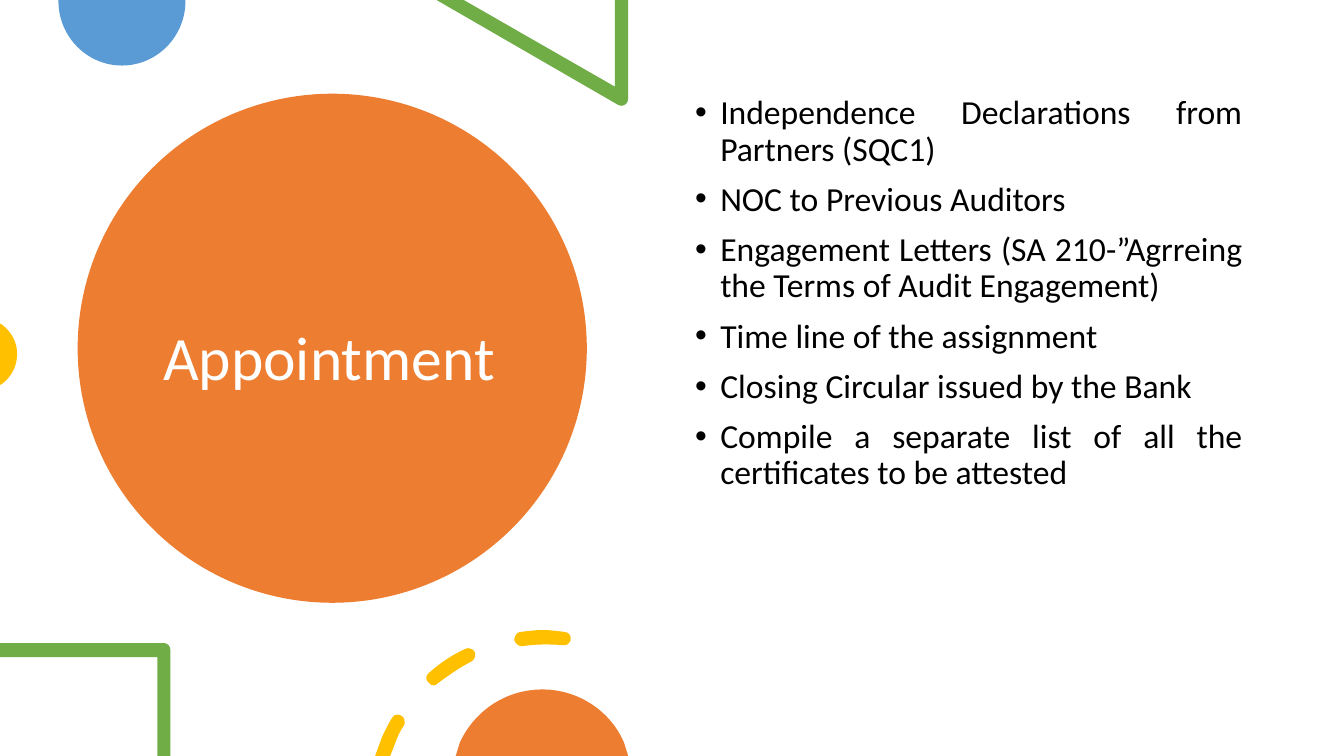
from pptx import Presentation
from pptx.dml.color import RGBColor
from pptx.enum.shapes import MSO_SHAPE
from pptx.enum.text import MSO_ANCHOR, PP_ALIGN
from pptx.oxml import parse_xml
from pptx.oxml.ns import nsdecls
from pptx.util import Cm, Pt

FONT = "Calibri"
BLUE, GREEN, GOLD, ORANGE = "5B9BD5", "70AD47", "FFC000", "ED7D31"
TITLE = "Appointment"
POINTS = [
    "Independence Declarations from Partners (SQC1)",
    "NOC to Previous Auditors",
    "Engagement Letters (SA 210-”Agrreing the Terms of Audit Engagement)",
    "Time line of the assignment",
    "Closing Circular issued by the Bank",
    "Compile a separate list of all the certificates to be attested",
]
TITLE_CIRCLE = (0.77, 0.93, 5.05, 5.05)
TITLE_BOX = (1.52, 1.35, 3.54, 4.45)
POINTS_BOX = (6.67, 0.9, 5.75, 5.35)

# Inches: pairs are corners, sixes are cubic curves.
TOP_DISC = [[(1.84, 0), (0.58, 0), (0.58, 0.01),
             (0.58, 0.36, 0.86, 0.65, 1.21, 0.65),
             (1.56, 0.65, 1.84, 0.36, 1.84, 0.01)]]
TRIANGLE = [[(6.23, 0), (6.1, 0), (6.1, 0.86), (4.6, 0), (4.33, 0), (6.13, 1.04),
             (6.14, 1.05, 6.15, 1.05, 6.16, 1.05),
             (6.2, 1.05, 6.23, 1.02, 6.23, 0.98)]]
LEFT_DISC = [[(0, 3.21), (0, 3.82), (0.02, 3.81),
              (0.11, 3.74, 0.17, 3.64, 0.17, 3.51),
              (0.17, 3.39, 0.11, 3.29, 0.02, 3.22)]]
CORNER_FRAME = [[(1.63, 6.38), (0, 6.38), (0, 6.52), (1.56, 6.52), (1.56, 7.5),
                 (1.69, 7.5), (1.69, 6.45), (1.69, 6.41, 1.66, 6.38, 1.63, 6.38)]]
DASHED_ARC = [
    [(3.95, 7.09), (3.93, 7.08, 3.9, 7.1, 3.89, 7.12),
     (3.85, 7.18, 3.82, 7.25, 3.79, 7.31), (3.72, 7.5), (3.87, 7.5), (3.92, 7.37),
     (3.94, 7.31, 3.97, 7.25, 4.01, 7.19), (4.02, 7.16, 4.01, 7.11, 3.98, 7.1),
     (3.97, 7.09, 3.96, 7.09, 3.95, 7.09)],
    [(4.64, 6.43), (4.63, 6.43, 4.62, 6.43, 4.61, 6.44),
     (4.48, 6.5, 4.36, 6.58, 4.25, 6.68), (4.22, 6.7, 4.22, 6.75, 4.25, 6.77),
     (4.26, 6.79, 4.28, 6.8, 4.3, 6.8), (4.32, 6.8, 4.33, 6.79, 4.34, 6.78),
     (4.45, 6.7, 4.56, 6.62, 4.68, 6.56), (4.71, 6.54, 4.72, 6.5, 4.71, 6.47),
     (4.69, 6.44, 4.67, 6.43, 4.64, 6.43)],
    [(5.38, 6.25), (5.31, 6.25, 5.24, 6.26, 5.16, 6.27),
     (5.13, 6.27, 5.1, 6.31, 5.1, 6.35), (5.11, 6.38, 5.14, 6.41, 5.17, 6.41),
     (5.18, 6.41), (5.32, 6.39, 5.45, 6.39, 5.58, 6.4),
     (5.62, 6.41, 5.65, 6.38, 5.66, 6.35), (5.67, 6.31, 5.64, 6.27, 5.6, 6.27),
     (5.53, 6.26, 5.45, 6.25, 5.38, 6.25)],
]
BOTTOM_DISC = [[(5.38, 6.84), (5.01, 6.84, 4.7, 7.06, 4.56, 7.37), (4.52, 7.5),
                (6.23, 7.5), (6.19, 7.37), (6.06, 7.06, 5.74, 6.84, 5.38, 6.84)]]
BACK_OUTLINES = [(TOP_DISC, BLUE), (TRIANGLE, GREEN), (LEFT_DISC, GOLD)]
FRONT_OUTLINES = [(CORNER_FRAME, GREEN), (DASHED_ARC, GOLD), (BOTTOM_DISC, ORANGE)]


def inches(v):
    return Cm(v * 2.54)


def color(value):
    return RGBColor.from_string(value)


def paint(sp, fill):
    sp.shadow.inherit = False
    sp.fill.solid()
    sp.fill.fore_color.rgb = color(fill)
    sp.line.fill.background()


def knots(contour):
    return [(inches(step[i]), inches(step[i + 1]))
            for step in contour for i in range(0, len(step), 2)]


def bend(sp, contours):
    segments = iter(sp._element.xpath(".//a:moveTo | .//a:lnTo"))
    for step in (step for contour in contours for step in contour):
        group = [next(segments) for _ in range(len(step) // 2)]
        if len(group) == 3:
            curve = parse_xml(f'<a:cubicBezTo {nsdecls("a")}/>')
            group[0].addprevious(curve)
            for segment in group:
                curve.append(segment[0])
                segment.getparent().remove(segment)


def add_outline(s, contours, fill):
    first, *rest = [knots(c) for c in contours]
    builder = s.shapes.build_freeform(*first[0])
    builder.add_line_segments(first[1:], close=True)
    for points in rest:
        builder.move_to(*points[0])
        builder.add_line_segments(points[1:], close=True)
    sp = builder.convert_to_shape()
    bend(sp, contours)
    paint(sp, fill)


def add_text(s, box, lines, size, fill, anchor, align):
    tf = s.shapes.add_textbox(*map(inches, box)).text_frame
    tf.word_wrap = True
    tf.vertical_anchor = anchor
    for i, line in enumerate(lines):
        p = tf.add_paragraph() if i else tf.paragraphs[0]
        p.alignment = align
        p.line_spacing = 0.9
        r = p.add_run()
        r.text = line
        r.font.name = FONT
        r.font.size = Pt(size)
        r.font.color.rgb = color(fill)
    return tf


def add_bullets(tf):
    for p in tf.paragraphs:
        p.space_before = Pt(10)
        pPr = p._p.get_or_add_pPr()
        pPr.set("marL", str(inches(0.375)))
        pPr.set("indent", str(inches(-0.25)))
        pPr.append(parse_xml(f'<a:buFont {nsdecls("a")} typeface="Arial"/>'))
        pPr.append(parse_xml(f'<a:buChar {nsdecls("a")} char="•"/>'))


def main():
    prs = Presentation()
    prs.slide_width, prs.slide_height = inches(13.33), inches(7.5)
    s = prs.slides.add_slide(prs.slide_layouts[6])
    paint(s.shapes.add_shape(MSO_SHAPE.OVAL, *map(inches, TITLE_CIRCLE)), ORANGE)
    add_text(s, TITLE_BOX, [TITLE], 44, "FFFFFF", MSO_ANCHOR.MIDDLE, PP_ALIGN.LEFT)
    for contours, fill in BACK_OUTLINES:
        add_outline(s, contours, fill)
    add_bullets(add_text(s, POINTS_BOX, POINTS, 24, "000000",
                         MSO_ANCHOR.TOP, PP_ALIGN.JUSTIFY))
    for contours, fill in FRONT_OUTLINES:
        add_outline(s, contours, fill)
    prs.save("out.pptx")


if __name__ == "__main__":
    main()
